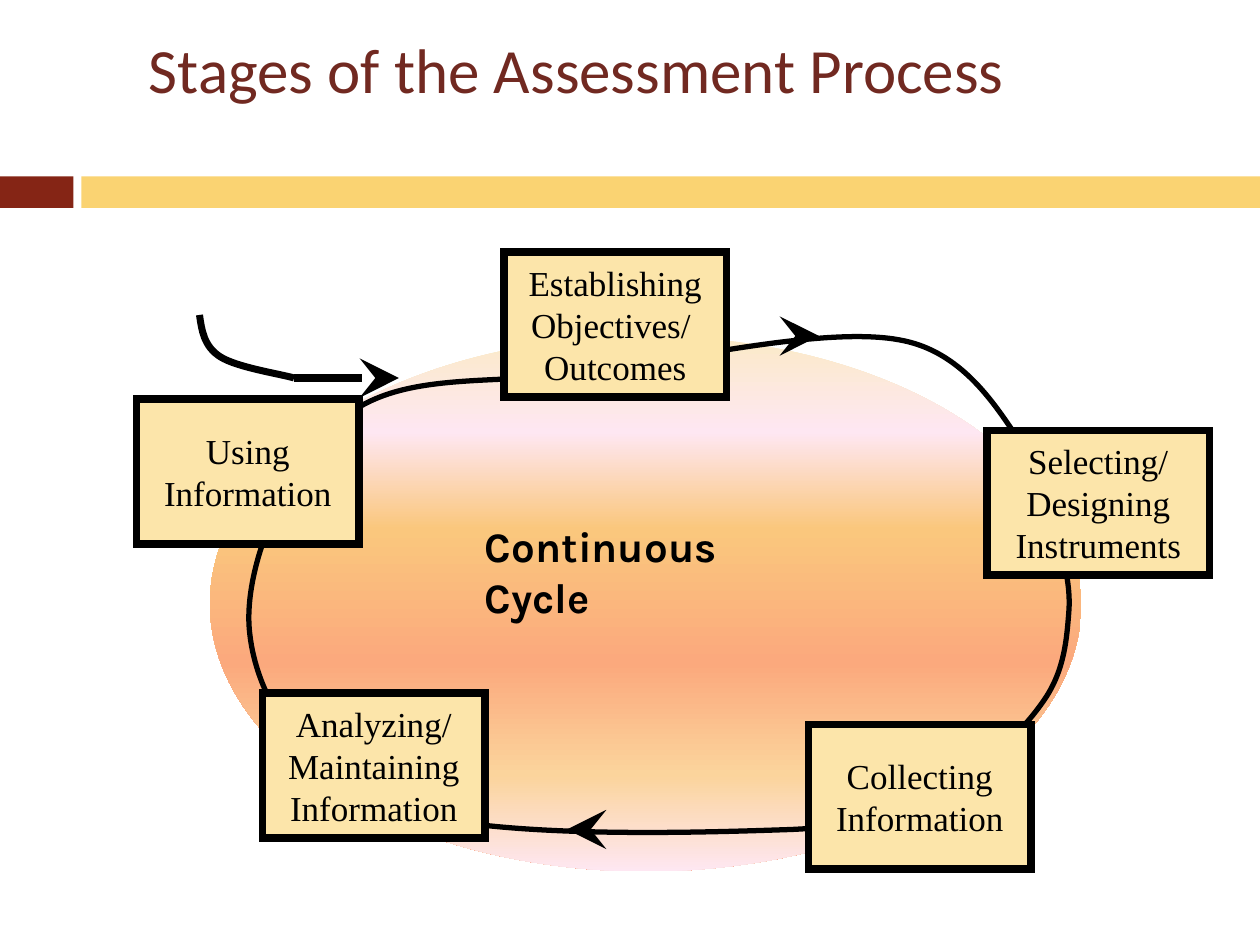
"""Build the slide of the five-stage assessment cycle on a grid of 120 by 90."""
from lxml import etree
from pptx import Presentation
from pptx import util as u
from pptx.dml.color import RGBColor
from pptx.enum import shapes, text
from pptx.oxml import ns

BLACK = RGBColor(0x00, 0x00, 0x00)
BROWN = RGBColor(0x71, 0x29, 0x21)
RED = RGBColor(0x85, 0x25, 0x15)
GOLD = RGBColor(0xFA, 0xD3, 0x72)
CREAM = RGBColor(0xFC, 0xE5, 0xAA)
PINK = RGBColor(0xFE, 0xE7, 0xF2)
STOPS = [
    (0, RGBColor(0xFB, 0xEA, 0xC7)), (18, PINK),
    (36, RGBColor(0xFA, 0xC7, 0x7D)), (61, RGBColor(0xFB, 0xA9, 0x7D)),
    (82, RGBColor(0xFB, 0xD4, 0x9C)), (100, PINK),
]

deck = Presentation()
deck.slide_width, deck.slide_height = u.Inches(10), u.Inches(7.5)
slide = deck.slides.add_slide(deck.slide_layouts[6])
UNIT = deck.slide_width // 120


def grid(*cells):
    """Turn grid cells into lengths."""
    return [round(cell * UNIT) for cell in cells]


def curve(start, dots, width, close):
    """Draw an outline of cubic bends, each of two handles and an end."""
    pen = slide.shapes.build_freeform(*grid(*start))
    pen.add_line_segments([grid(*dot) for dot in dots], close=close)
    line = pen.convert_to_shape()
    line.shadow.inherit = False
    line.fill.background()
    line.line.color.rgb = BLACK
    line.line.width = u.Pt(width)
    legs = list(line.element.iter(ns.qn("a:lnTo")))
    for one, two, end in zip(legs[::3], legs[1::3], legs[2::3]):
        bend = etree.Element(ns.qn("a:cubicBezTo"))
        one.addprevious(bend)
        for leg in (one, two, end):
            bend.append(leg[0])
            leg.getparent().remove(leg)


for left, width, color in [(0, 7, RED), (7.75, 112.25, GOLD)]:
    bar = slide.shapes.add_shape(
        shapes.MSO_SHAPE.RECTANGLE, *grid(left, 16.8, width, 3))
    bar.shadow.inherit = False
    bar.fill.solid()
    bar.fill.fore_color.rgb = color
    bar.line.fill.background()

oval = slide.shapes.add_shape(shapes.MSO_SHAPE.OVAL, *grid(20, 32, 83, 51))
oval.shadow.inherit = False
oval.line.fill.background()
oval.fill.gradient()
oval.fill.gradient_angle = 270
stops = oval.element.spPr.find(".//" + ns.qn("a:gsLst"))
stops.clear()
for share, color in STOPS:
    stop = etree.SubElement(stops, ns.qn("a:gs"), pos=str(share * 1000))
    etree.SubElement(stop, ns.qn("a:srgbClr"), val=str(color))

curve((55.9, 35.5), [
    (64.7, 34.3), (78.7, 31), (85.8, 32.4),
    (92.8, 33.7), (95.9, 40.7), (98.4, 43.8),
    (100.8, 46.9), (100.1, 48.6), (100.7, 51),
    (101.3, 53.4), (102, 55.7), (101.8, 58.3),
    (101.6, 60.8), (101.4, 63.8), (99.5, 66.6),
    (97.6, 69.4), (94.3, 72.7), (90.4, 74.9),
    (86.3, 76.9), (84.2, 78.6), (75.4, 79),
    (66.6, 79.3), (46.2, 80), (37.6, 76.9),
    (28.9, 73.8), (24.5, 66.6), (23.8, 60.4),
    (23, 54.1), (27.4, 43.9), (33, 39.6),
    (38.5, 35.3), (47.2, 36.7), (55.9, 35.5),
], 3, True)
curve((19, 30), [
    (19.2, 31.4), (19.4, 33), (21, 34),
    (22.6, 35), (26.6, 35.6), (28, 36),
], 4, False)

for start, end, row in [(28, 38, 36), (56, 54, 79), (76, 78, 32)]:
    arrow = slide.shapes.add_connector(
        shapes.MSO_CONNECTOR.STRAIGHT, *grid(start, row, end, row))
    arrow.line.color.rgb = BLACK
    arrow.line.width = u.Pt(4.5)
    etree.SubElement(arrow.line._get_or_add_ln(), ns.qn("a:tailEnd"),
                     type="stealth", w="lg", len="lg")
    etree.SubElement(arrow.element.spPr, ns.qn("a:effectLst"))

for left, top, words in [
    (48, 24, "Establishing\nObjectives/ \nOutcomes"),
    (94, 41, "Selecting/\nDesigning\nInstruments"),
    (77, 69, "Collecting\nInformation"),
    (25, 66, "Analyzing/\nMaintaining\nInformation"),
    (13, 38, "Using\nInformation"),
]:
    box = slide.shapes.add_shape(
        shapes.MSO_SHAPE.RECTANGLE, *grid(left, top, 21.2, 13.8))
    box.shadow.inherit = False
    box.fill.solid()
    box.fill.fore_color.rgb = CREAM
    box.line.color.rgb = BLACK
    box.line.width = u.Pt(4.5)
    etree.SubElement(box.line._get_or_add_ln(), ns.qn("a:miter"), lim="800000")
    frame = box.text_frame
    frame.word_wrap = False
    frame.vertical_anchor = text.MSO_ANCHOR.MIDDLE
    frame.text = words
    for para in frame.paragraphs:
        para.alignment = text.PP_ALIGN.CENTER
        para.font.name = "Times New Roman"
        para.font.size = u.Pt(20)
        para.font.color.rgb = BLACK

for place, words, face, size, color, bold, anchor in [
    ((13, 2, 102, 9), "Stages of the Assessment Process",
     "Calibri", 36, BROWN, False, text.MSO_ANCHOR.MIDDLE),
    ((45, 49, 34.5, 6), "Continuous Cycle",
     "Karla", 24, BLACK, True, text.MSO_ANCHOR.TOP),
]:
    frame = slide.shapes.add_textbox(*grid(*place)).text_frame
    frame.word_wrap = True
    frame.vertical_anchor = anchor
    frame.text = words
    font = frame.paragraphs[0].font
    font.name, font.size, font.bold = face, u.Pt(size), bold
    font.color.rgb = color

deck.save("out.pptx")
